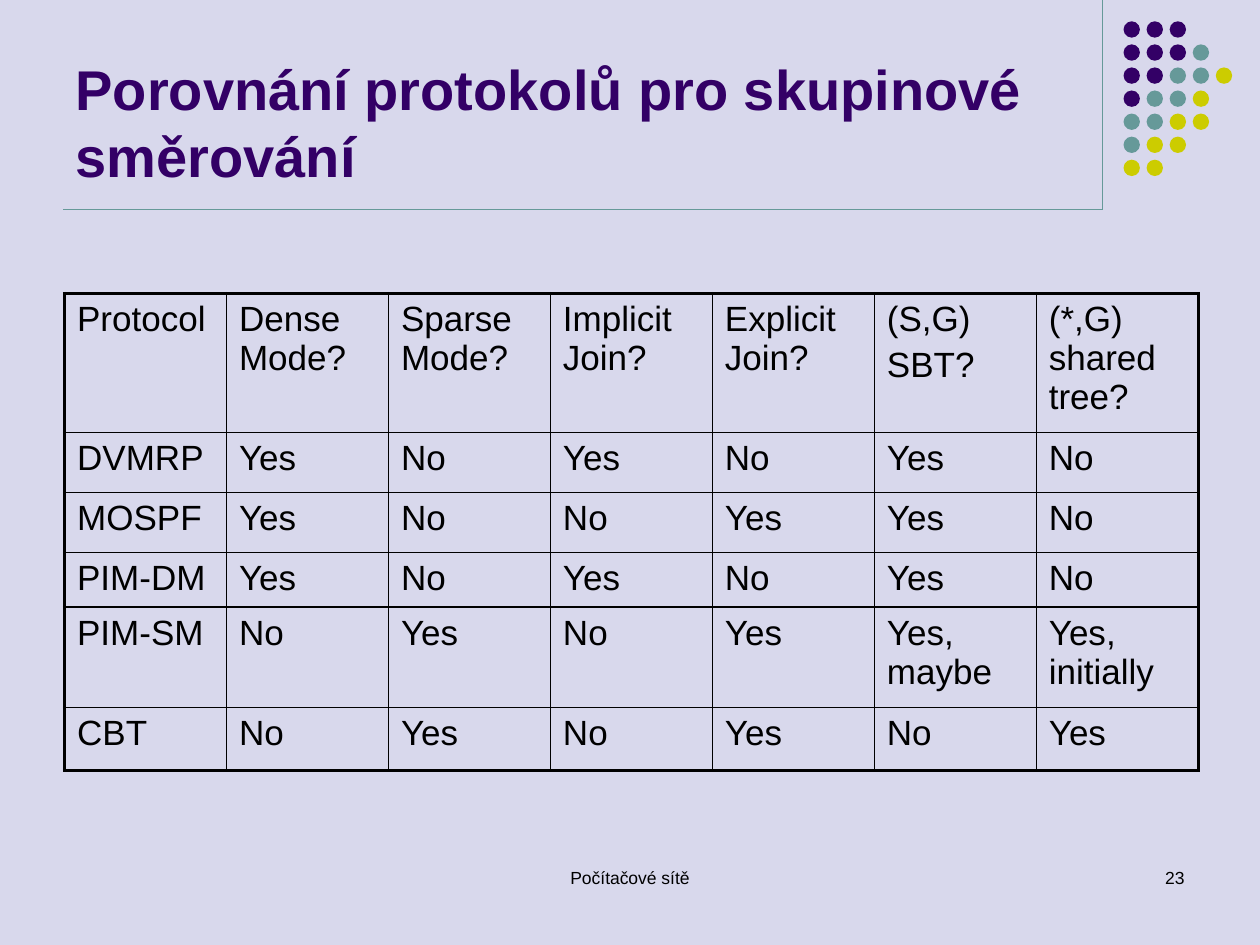
from pptx import Presentation
from pptx.dml.color import RGBColor
from pptx.enum.shapes import MSO_CONNECTOR, MSO_SHAPE
from pptx.enum.text import MSO_ANCHOR, MSO_AUTO_SIZE, PP_ALIGN
from pptx.util import Cm, Pt
from lxml.etree import SubElement
from pptx.oxml.ns import qn

TITLE = "Porovnání protokolů pro skupinové směrování"
FOOTER = "Počítačové sítě"
NUMBER = "23"
ROWS = [
    ("Protocol", "Dense Mode?", "Sparse Mode?", "Implicit Join?",
     "Explicit Join?", "(S,G)\nSBT?", "(*,G) shared tree?"),
    ("DVMRP", "Yes", "No", "Yes", "No", "Yes", "No"),
    ("MOSPF", "Yes", "No", "No", "Yes", "Yes", "No"),
    ("PIM-DM", "Yes", "No", "Yes", "No", "Yes", "No"),
    ("PIM-SM", "No", "Yes", "No", "Yes", "Yes, maybe", "Yes, initially"),
    ("CBT", "No", "Yes", "No", "Yes", "No", "Yes"),
]
HEIGHTS = [2.62, 1.21, 1.21, 1.04, 2.03, 1.26]
DOTS = ["ppp", "pppt", "pptty", "ptty", "ttyy", "tyy", "yy"]
LINES = [(22.23, 0, 22.23, 4.23), (1.27, 4.23, 22.23, 4.23)]

THEME = {
    "font": "Arial",
    "back": "D8D8EC", "text": "000000",
    "p": "330066", "t": "669999", "y": "CCCC00",
    "title": 32, "cell": 20, "small": 10,
    "thin": 1, "thick": 2.25, "rule": 0.75,
}


def color(name):
    return RGBColor.from_string(THEME[name])


def write(frame, text, size="cell", ink="text", bold=False,
          align=PP_ALIGN.LEFT, before=0):
    frame.word_wrap = True
    frame.text = text
    for para in frame.paragraphs:
        para.alignment = align
        para.space_before = Pt(before)
        font = para.runs[0].font
        font.name = THEME["font"]
        font.size = Pt(THEME[size])
        font.bold = bold
        font.color.rgb = color(ink)


def border(cell, widths):
    props = cell._tc.get_or_add_tcPr()
    for spot, (side, width) in enumerate(widths.items()):
        line = props.makeelement(qn(f"a:ln{side}"), {"w": str(Pt(THEME[width]))})
        fill = SubElement(line, qn("a:solidFill"))
        SubElement(fill, qn("a:srgbClr"), val=THEME["text"])
        props.insert(spot, line)


def add_rules(slide):
    for x1, y1, x2, y2 in LINES:
        rule = slide.shapes.add_connector(
            MSO_CONNECTOR.STRAIGHT, Cm(x1), Cm(y1), Cm(x2), Cm(y2))
        rule.line.color.rgb = color("t")
        rule.line.width = Pt(THEME["rule"])
        SubElement(rule._element.spPr, qn("a:effectLst"))


def add_dots(slide):
    group = slide.shapes.add_group_shape()
    left, top, size, pitch = Cm(22.65), Cm(0.43), Cm(0.33), Cm(1.86) // 4
    for row, line in enumerate(DOTS):
        for col, ink in enumerate(line):
            dot = group.shapes.add_shape(
                MSO_SHAPE.OVAL, left + col * pitch, top + row * pitch, size, size)
            dot.shadow.inherit = False
            dot.fill.solid()
            dot.fill.fore_color.rgb = color(ink)
            dot.line.fill.background()


def add_title(slide):
    title = slide.shapes.title
    title.left, title.top = Cm(1.27), Cm(0.33)
    title.width, title.height = Cm(20.96), Cm(3.6)
    frame = title.text_frame
    frame.auto_size = MSO_AUTO_SIZE.NONE
    frame.vertical_anchor = MSO_ANCHOR.BOTTOM
    write(frame, TITLE, size="title", ink="p", bold=True)


def add_note(slide, text, left, width, align):
    box = slide.shapes.add_textbox(Cm(left), Cm(17.35), Cm(width), Cm(1.27))
    write(box.text_frame, text, size="small", align=align)


def add_grid(slide):
    count, wide = len(ROWS[0]), Cm(22.86)
    table = slide.shapes.add_table(
        len(ROWS), count, Cm(1.3), Cm(5.92), wide, Cm(sum(HEIGHTS))).table
    table.first_row = False
    table.horz_banding = False
    for col in table.columns:
        col.width = wide // count
    for r, (words, high) in enumerate(zip(ROWS, HEIGHTS)):
        table.rows[r].height = Cm(high)
        for c, text in enumerate(words):
            cell = table.cell(r, c)
            cell.fill.background()
            write(cell.text_frame, text, before=4)
            edges = {"L": c == 0, "R": c == count - 1,
                     "T": r == 0, "B": r == len(ROWS) - 1}
            border(cell, {side: "thick" if outer else "thin"
                          for side, outer in edges.items()})


def main():
    deck = Presentation()
    deck.slide_width, deck.slide_height = Cm(25.4), Cm(19.05)
    slide = deck.slides.add_slide(deck.slide_layouts[5])
    slide.background.fill.solid()
    slide.background.fill.fore_color.rgb = color("back")
    add_rules(slide)
    add_dots(slide)
    add_note(slide, FOOTER, 8.68, 8.04, PP_ALIGN.CENTER)
    add_note(slide, NUMBER, 18.2, 5.93, PP_ALIGN.RIGHT)
    add_title(slide)
    add_grid(slide)
    deck.save("out.pptx")


if __name__ == "__main__":
    main()
